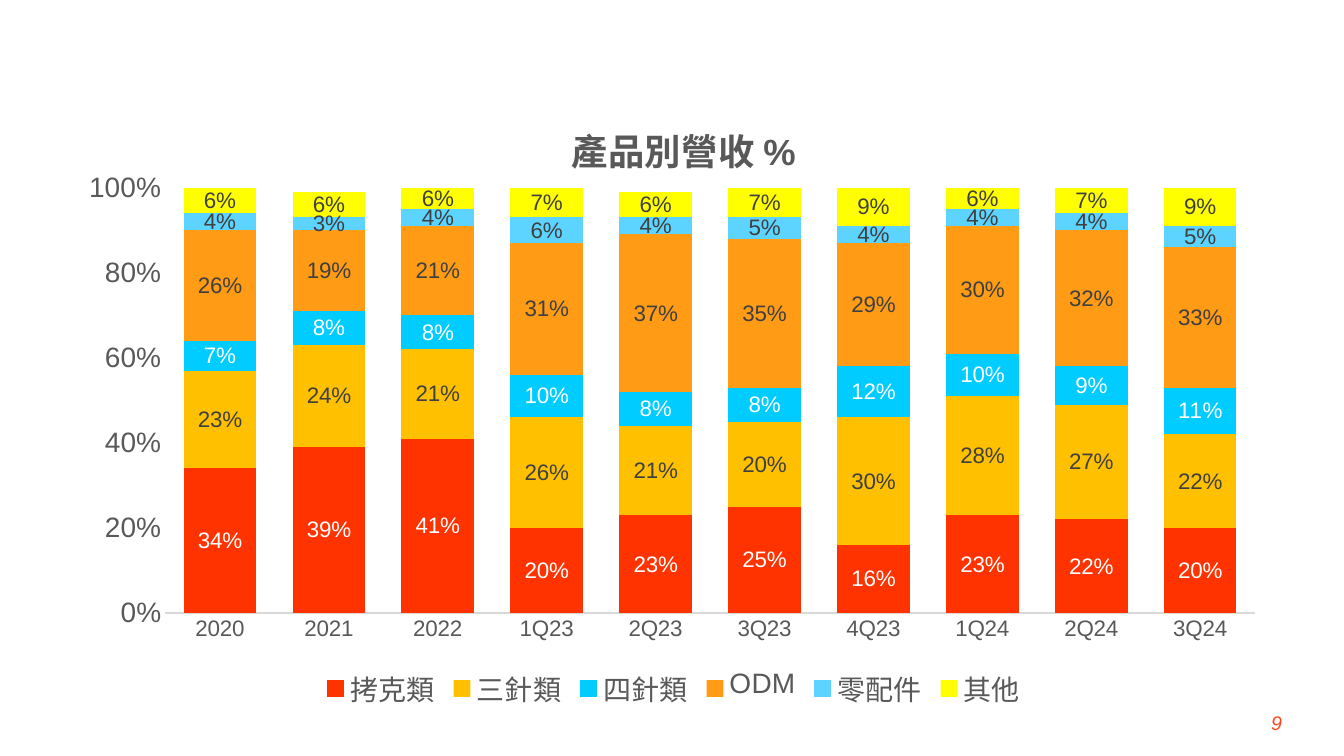
from pptx import Presentation
from pptx.chart.data import CategoryChartData as ChartData
from pptx.dml.color import RGBColor
from pptx.enum.chart import XL_CHART_TYPE as Kind, XL_LEGEND_POSITION as Side, XL_TICK_MARK as Tick
from pptx.enum.text import PP_ALIGN as Align
from pptx.oxml import parse_xml
from pptx.oxml.ns import nsdecls
from pptx.util import Cm, Pt

RED = RGBColor(0xFF, 0x33, 0x00)
GOLD = RGBColor(0xFF, 0xC0, 0x00)
CYAN = RGBColor(0x00, 0xCC, 0xFF)
ORANGE = RGBColor(0xFF, 0x9B, 0x15)
SKY = RGBColor(0x5D, 0xD4, 0xFF)
YELLOW = RGBColor(0xFF, 0xFF, 0x00)
WHITE = RGBColor(0xFF, 0xFF, 0xFF)
DARK = RGBColor(0x40, 0x40, 0x40)
GRAY = RGBColor(0x59, 0x59, 0x59)
PALE = RGBColor(0xD9, 0xD9, 0xD9)
CORAL = RGBColor(0xFA, 0x46, 0x1E)


def style(font, size, color):
    font.name = "Arial"
    font.size = Pt(size)
    font.color.rgb = color


def place(node, index, **spots):
    for old in node.xpath("./c:layout"):
        node.remove(old)
    modes = "".join(f'<c:{key}Mode val="edge"/>' for key in spots if key in "xy")
    values = "".join(f'<c:{key} val="{val}"/>' for key, val in spots.items())
    target = '<c:layoutTarget val="inner"/>' if "w" in spots else ""
    node.insert(index, parse_xml(
        f'<c:layout {nsdecls("c")}><c:manualLayout>{target}{modes}{values}'
        '</c:manualLayout></c:layout>'))


deck = Presentation()
deck.slide_width = Cm(33.87)
deck.slide_height = Cm(19.05)
slide = deck.slides.add_slide(deck.slide_layouts[6])

box = slide.shapes.add_textbox(Cm(30.66), Cm(17.8), Cm(1.9), Cm(1.02))
box.text_frame.word_wrap = True
para = box.text_frame.paragraphs[0]
para.alignment = Align.RIGHT
run = para.add_run()
run.text = "9"
style(run.font, 14, CORAL)
run.font.italic = True

lines = [
    ("拷克類", RED, WHITE, [34, 39, 41, 20, 23, 25, 16, 23, 22, 20]),
    ("三針類", GOLD, DARK, [23, 24, 21, 26, 21, 20, 30, 28, 27, 22]),
    ("四針類", CYAN, WHITE, [7, 8, 8, 10, 8, 8, 12, 10, 9, 11]),
    ("ODM", ORANGE, DARK, [26, 19, 21, 31, 37, 35, 29, 30, 32, 33]),
    ("零配件", SKY, DARK, [4, 3, 4, 6, 4, 5, 4, 4, 4, 5]),
    ("其他", YELLOW, DARK, [6, 6, 6, 7, 6, 7, 9, 6, 7, 9]),
]
data = ChartData(number_format="0%")
data.categories = ["2020", "2021", "2022", "1Q23", "2Q23",
                   "3Q23", "4Q23", "1Q24", "2Q24", "3Q24"]
for name, fill, ink, shares in lines:
    data.add_series(name, [share / 100 for share in shares])

chart = slide.shapes.add_chart(
    Kind.COLUMN_STACKED, Cm(1.73), Cm(2.01), Cm(30.5), Cm(16), data).chart
style(chart.font, 16, GRAY)

chart.has_title = True
run = chart.chart_title.text_frame.paragraphs[0].add_run()
run.text = "產品別營收 %"
style(run.font, 26, GRAY)
run.font.bold = True
chart.chart_title.include_in_layout = False

chart.has_legend = True
chart.legend.position = Side.BOTTOM
chart.legend.include_in_layout = False
style(chart.legend.font, 20, GRAY)

plot = chart.plots[0]
plot.gap_width = 50
plot.overlap = 100
plot.vary_by_categories = False
for bars, (name, fill, ink, shares) in zip(plot.series, lines):
    bars.format.fill.solid()
    bars.format.fill.fore_color.rgb = fill
    labels = bars.data_labels
    labels.show_value = True
    labels.number_format = "0%"
    labels.number_format_is_linked = False
    style(labels.font, 16, ink)

years = chart.category_axis
years.major_tick_mark = years.minor_tick_mark = Tick.NONE
years.format.line.color.rgb = PALE
years.format.line.width = Pt(0.75)
style(years.tick_labels.font, 16, GRAY)

scale = chart.value_axis
scale.major_tick_mark = scale.minor_tick_mark = Tick.NONE
scale.has_major_gridlines = False
scale.minimum_scale = 0
scale.maximum_scale = 1
scale.major_unit = 0.2
scale.format.line.fill.background()
scale.tick_labels.number_format = "0%"
scale.tick_labels.number_format_is_linked = False
style(scale.tick_labels.font, 20, GRAY)

place(chart.element.xpath("./c:chart/c:title")[0], 1, x=0.41, y=0.05)
place(chart.element.xpath("./c:chart/c:plotArea")[0], 0, x=0.08, y=0.17, w=0.9, h=0.67)

deck.save("out.pptx")
